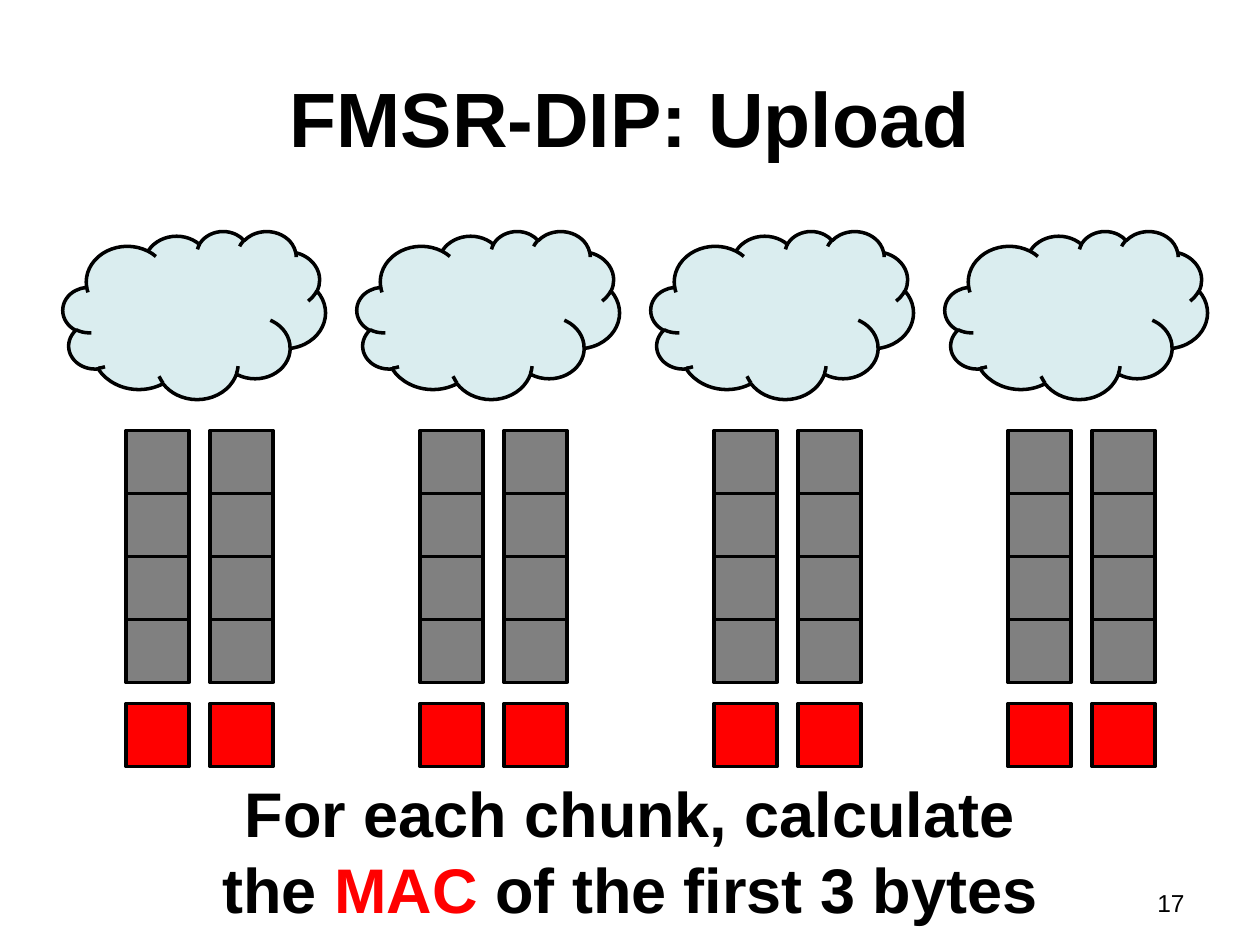
from pptx import Presentation
from pptx.dml.color import RGBColor
from pptx.enum.shapes import MSO_SHAPE as Shape
from pptx.enum.text import MSO_ANCHOR as Anchor, PP_ALIGN as Align
from pptx.util import Inches, Pt

BLACK = RGBColor(0x00, 0x00, 0x00)
RED = RGBColor(0xFF, 0x00, 0x00)
GRAY = RGBColor(0x80, 0x80, 0x80)
PALE_BLUE = RGBColor(0xDA, 0xED, 0xEF)

# The slide is a grid of 60 columns by 45 rows of square cells
deck = Presentation()
deck.slide_width, deck.slide_height = Inches(10), Inches(7.5)
CELL = deck.slide_width / 60
page = deck.slides.add_slide(deck.slide_layouts[5])


def add_block(kind, column, row, columns, rows, fill):
    cells = (column, row, columns, rows)
    block = page.shapes.add_shape(kind, *(round(n * CELL) for n in cells))
    block.shadow.inherit = False
    block.fill.solid()
    block.fill.fore_color.rgb = fill
    block.line.color.rgb = BLACK
    block.line.width = Pt(2)


def add_span(para, text, size, color=BLACK, bold=True):
    span = para.add_run()
    span.text = text
    span.font.name = "Arial"
    span.font.size = Pt(size)
    span.font.bold = bold
    span.font.color.rgb = color


# Title
title = page.shapes.title
title.left, title.top = Inches(0.5), Inches(0.3)
title.width, title.height = Inches(9), Inches(1.25)
title.text_frame.vertical_anchor = Anchor.MIDDLE
para = title.text_frame.paragraphs[0]
para.alignment = Align.CENTER
add_span(para, "FMSR-DIP: Upload", 44)

# Four clouds, each with two chunks of four bytes and a MAC below each chunk
for cloud in range(4):
    left = 3 + 14 * cloud
    add_block(Shape.CLOUD, left, 11, 12.5, 8, PALE_BLUE)
    for chunk in range(2):
        column = left + 3 + 4 * chunk
        for byte in range(4):
            add_block(Shape.RECTANGLE, column, 20.5 + 3 * byte, 3, 3, GRAY)
        add_block(Shape.RECTANGLE, column, 33.5, 3, 3, RED)

# Caption
caption = page.shapes.add_textbox(0, Inches(6.1), deck.slide_width, Inches(1.31))
caption.text_frame.word_wrap = True
para = caption.text_frame.paragraphs[0]
para.alignment = Align.CENTER
add_span(para, "For each chunk, calculate", 36)
para.add_line_break()
add_span(para, "the ", 36)
add_span(para, "MAC ", 36, RED)
add_span(para, "of the first 3 bytes", 36)

# Page number
number = page.shapes.add_textbox(Inches(7.17), Inches(7), Inches(2.33), Inches(0.35))
number.text_frame.word_wrap = True
para = number.text_frame.paragraphs[0]
para.alignment = Align.RIGHT
add_span(para, "17", 14, bold=False)

deck.save("out.pptx")
